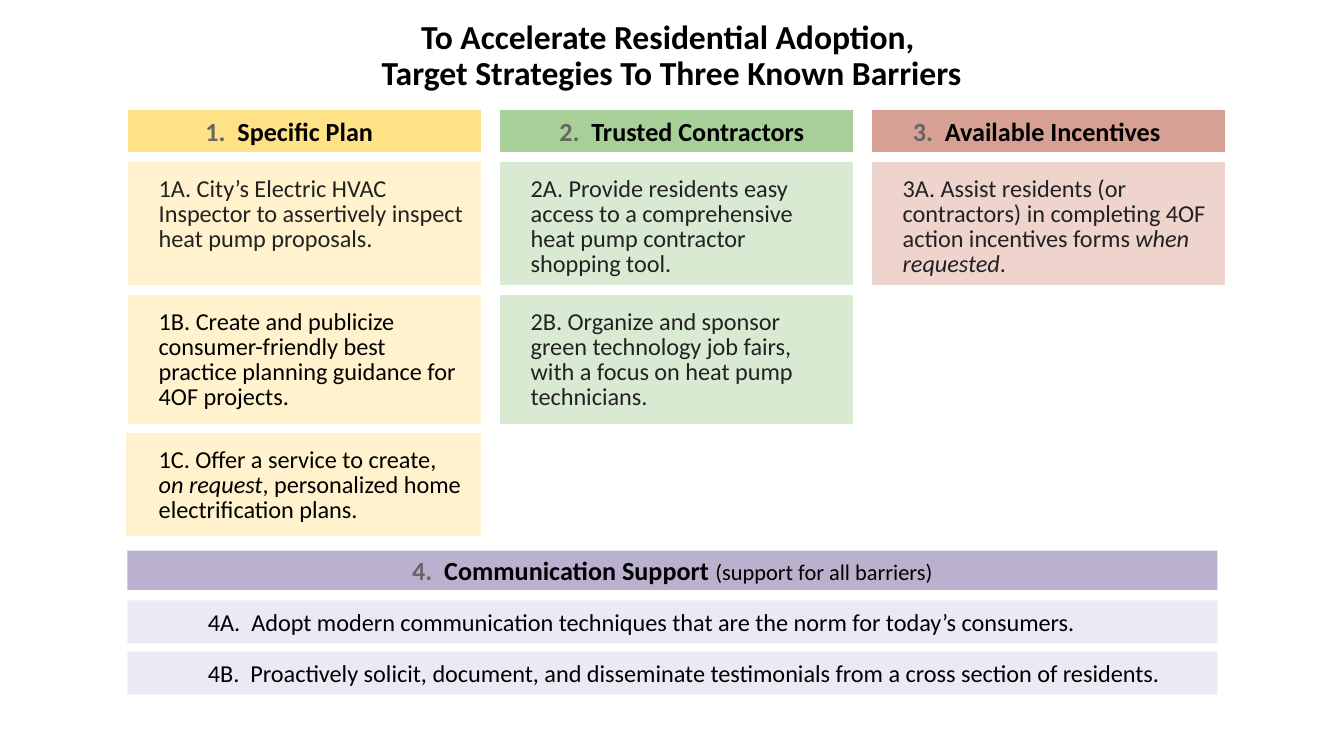
from pptx import Presentation
from pptx.dml.color import RGBColor
from pptx.enum.shapes import MSO_SHAPE
from pptx.enum.text import MSO_ANCHOR, PP_ALIGN, MSO_AUTO_SIZE
from pptx.oxml.ns import qn
from pptx.util import Cm, Pt
from lxml.etree import SubElement, Element

THEME = {
    "font": "Calibri",
    "white": "FFFFFF", "black": "000000", "ink": "222222", "gray": "666666",
    "gold": ("FFD966", 79), "cream": ("FFF2CC", 100),
    "green": ("93C47D", 80), "mint": ("D9EAD3", 100),
    "brick": ("C1705F", 66), "rose": ("E6B8AF", 62),
    "plum": ("ACA3C5", 84), "lilac": ("D9D2E9", 48),
    "blank": ("FFFFFF", 100),
    "title": 18, "head": 14, "body": 13, "note": 12,
}

TITLE = "To Accelerate Residential Adoption, \nTarget Strategies To Three Known Barriers"

HEADS = [
    ("1.", "  Specific Plan", "gold", 1.64),
    ("2.", "  Trusted Contractors", "green", 1.3),
    ("3.", "  Available Incentives", "brick", 0.95),
]

PLANS = [
    [("cream", "ink", ["1A. City’s Electric HVAC Inspector to assertively inspect heat pump proposals."]),
     ("mint", "ink", ["2A. Provide residents easy access to a comprehensive heat pump contractor shopping tool."]),
     ("rose", "ink", ["3A. Assist residents (or contractors) in completing 4OF action incentives forms ",
                      "when requested", "."])],
    [("cream", "black", ["1B. Create and publicize consumer-friendly best practice planning guidance for 4OF projects."]),
     ("mint", "ink", ["2B. Organize and sponsor green technology job fairs, with a focus on heat pump technicians."]),
     ("blank", "ink", [])],
    [("cream", "black", ["1C. Offer a service to create, \n", "on request",
                         ", personalized home electrification plans."]),
     ("blank", "ink", []),
     ("blank", "ink", [])],
]

SUPPORT = ("4.", "  Communication Support ", "(support for all barriers)")
STEPS = [
    "4A.  Adopt modern communication techniques that are the norm for today’s consumers.",
    "4B.  Proactively solicit, document, and disseminate testimonials from a cross section of residents.",
]

LEFT, TOP, WIDE = 2.24, 2.06, 7.03
ROWS = [0.91, 2.51, 2.62, 2.06]
BAND = (2.41, 10.41, 20.6, 0.74)
STEP_TOP, STEP_GAP, STEP_TALL = 11.35, 0.97, 0.81


def add_run(para, text, size, color, bold=False, slant=False):
    for n, part in enumerate(text.split("\n")):
        if n:
            para.add_line_break()
        if part:
            run = para.add_run()
            run.text = part
            font = run.font
            font.name, font.size = THEME["font"], Pt(THEME[size])
            font.bold, font.italic = bold, slant
            font.color.rgb = RGBColor.from_string(THEME[color])


def paint(fill, root, name):
    color, alpha = THEME[name]
    fill.solid()
    fill.fore_color.rgb = RGBColor.from_string(color)
    if alpha < 100:
        node = root.find(qn("a:solidFill")).find(qn("a:srgbClr"))
        SubElement(node, qn("a:alpha"), val=str(alpha * 1000))


def pad(box, left, top, right, bottom):
    box.margin_left, box.margin_top = Cm(left), Cm(top)
    box.margin_right, box.margin_bottom = Cm(right), Cm(bottom)


def edge(props, sides):
    for n, (tag, size) in enumerate(sides):
        line = Element(qn("a:" + tag), w=str(Pt(size)))
        fill = SubElement(line, qn("a:solidFill"))
        SubElement(fill, qn("a:srgbClr"), val=THEME["white"])
        props.insert(n, line)


def dress(cell, name, row, col):
    props = cell._tc.get_or_add_tcPr()
    paint(cell.fill, props, name)
    last = len(ROWS) - 1
    edge(props, [("lnL", 9 if (row, col) == (last, 0) else 12), ("lnR", 12),
                 ("lnT", 6 if row else 0.75), ("lnB", 1.5 if row == last else 6)])


def add_grid(slide):
    frame = slide.shapes.add_table(len(ROWS), len(HEADS), Cm(LEFT), Cm(TOP),
                                   Cm(WIDE * len(HEADS)), Cm(sum(ROWS)))
    grid = frame.table
    grid.first_row = grid.horz_banding = False
    for col in grid.columns:
        col.width = Cm(WIDE)
    for row, tall in zip(grid.rows, ROWS):
        row.height = Cm(tall)
    for c, (mark, name, tint, left) in enumerate(HEADS):
        cell = grid.cell(0, c)
        dress(cell, tint, 0, c)
        pad(cell, left, 0.08, 0.25, 0.1)
        cell.vertical_anchor = MSO_ANCHOR.MIDDLE
        para = cell.text_frame.paragraphs[0]
        para.line_spacing = 0.9
        add_run(para, mark, "head", "gray", True)
        add_run(para, name, "head", "black", True)
    for r, plans in enumerate(PLANS, 1):
        for c, (tint, color, parts) in enumerate(plans):
            cell = grid.cell(r, c)
            dress(cell, tint, r, c)
            pad(cell, 0.76, 0.38, 0.51, 0.13)
            para = cell.text_frame.paragraphs[0]
            para.line_spacing = 0.85
            for n, part in enumerate(parts):
                add_run(para, part, "body", color, slant=n == 1)


def add_bar(slide, place, tint, align, left):
    bar = slide.shapes.add_shape(MSO_SHAPE.RECTANGLE, *map(Cm, place))
    bar.shadow.inherit = False
    bar.line.fill.background()
    paint(bar.fill, bar._element.spPr, tint)
    frame = bar.text_frame
    frame.word_wrap = True
    frame.vertical_anchor = MSO_ANCHOR.MIDDLE
    pad(frame, left, 0, 0.25, 0)
    para = frame.paragraphs[0]
    para.alignment = align
    return para


def main():
    deck = Presentation()
    deck.slide_width, deck.slide_height = Cm(25.4), Cm(14.29)
    slide = deck.slides.add_slide(deck.slide_layouts[5])

    title = slide.shapes.title
    title.left, title.top, title.width, title.height = map(Cm, (0.86, 0.13, 23.67, 1.52))
    frame = title.text_frame
    frame.auto_size = MSO_AUTO_SIZE.NONE
    frame.word_wrap = True
    frame.vertical_anchor = MSO_ANCHOR.TOP
    pad(frame, 0.25, 0.25, 0.25, 0.25)
    para = frame.paragraphs[0]
    para.alignment, para.line_spacing = PP_ALIGN.CENTER, 0.9
    add_run(para, TITLE, "title", "black", True)

    add_grid(slide)

    para = add_bar(slide, BAND, "plum", PP_ALIGN.CENTER, 0.25)
    mark, name, note = SUPPORT
    add_run(para, mark, "head", "gray", True)
    add_run(para, name, "head", "black", True)
    add_run(para, note, "note", "black")

    for n, text in enumerate(STEPS):
        place = (BAND[0], STEP_TOP + n * STEP_GAP, BAND[2], STEP_TALL)
        para = add_bar(slide, place, "lilac", PP_ALIGN.LEFT, 1.52)
        add_run(para, text, "body", "black")

    deck.save("out.pptx")


if __name__ == "__main__":
    main()
